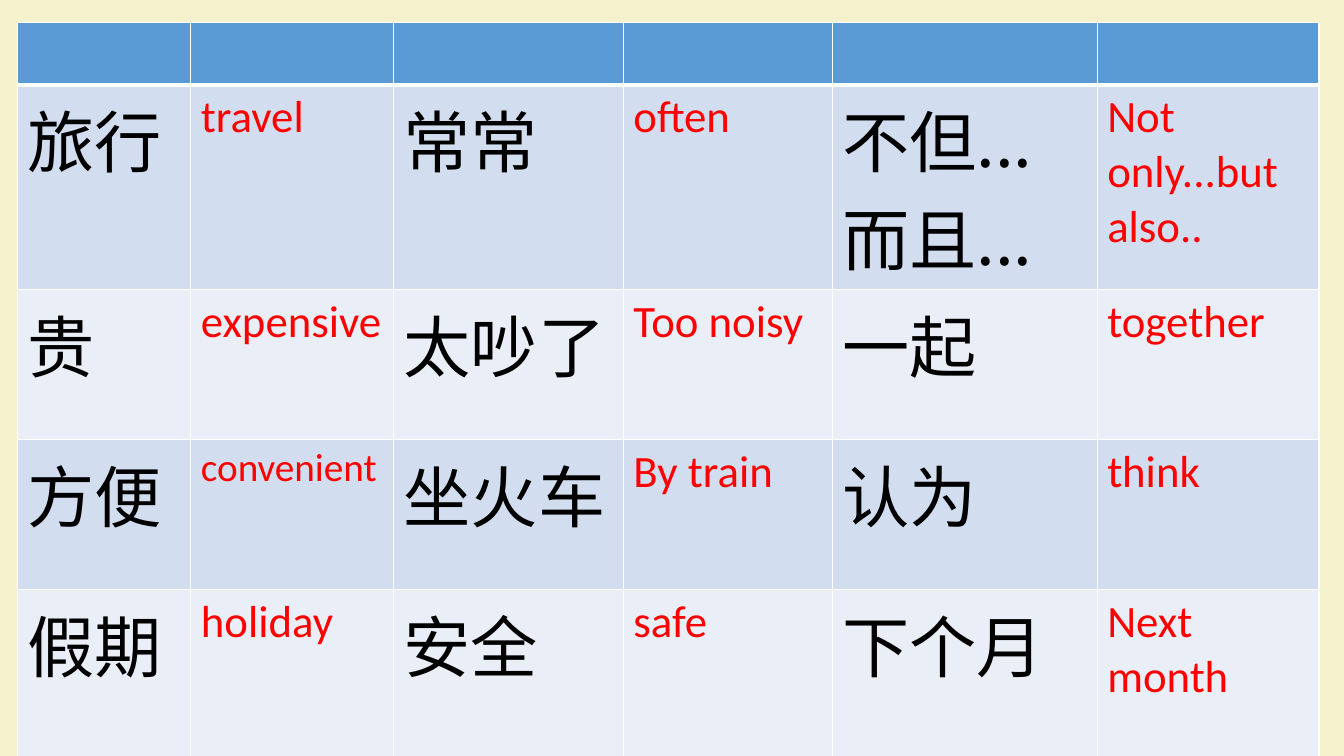
"""Build a Chinese-English vocabulary table slide."""
from dataclasses import dataclass

from lxml import etree
from pptx import Presentation
from pptx import util as u
from pptx.dml import color
from pptx.oxml import ns


@dataclass(frozen=True)
class Theme:
    """Colours, fonts and type sizes of the slide."""
    page: str = "F5F2CD"
    header: str = "5B9BD5"
    bands: tuple = ("D2DEEF", "EAEFF7")
    border: str = "FFFFFF"
    hanzi_color: str = "000000"
    english_color: str = "FF0000"
    hanzi_font: str = "Noto Sans CJK SC"
    english_font: str = "Calibri"
    hanzi_size: int = 48
    english_size: int = 32
    long_size: int = 28


THEME = Theme()
COLUMN_WIDTHS = (4.37, 5.11, 5.79, 5.26, 6.68, 5.59)
ROW_HEIGHTS = (1.57, 4.27, 3.78, 3.78, 4.27)
VOCABULARY = (
    (("旅行", "travel"), ("常常", "often"), ("不但...而且...", "Not only...but also..")),
    (("贵", "expensive"), ("太吵了", "Too noisy"), ("一起", "together")),
    (("方便", "convenient"), ("坐火车", "By train"), ("认为", "think")),
    (("假期", "holiday"), ("安全", "safe"), ("下个月", "Next month")),
)
LONG_WORDS = {"convenient"}


def rgb(value):
    """Return a colour from its hex digits."""
    return color.RGBColor.from_string(value)


def paint(target, value):
    """Give a cell or background a solid fill."""
    target.fill.solid()
    target.fill.fore_color.rgb = rgb(value)


def add_borders(cell, widths):
    """Draw the cell's sides with the given widths in points."""
    properties = cell._tc.get_or_add_tcPr()
    for side, width in widths.items():
        line = etree.SubElement(properties, ns.qn(f"a:ln{side}"), w=str(u.Pt(width)))
        fill = etree.SubElement(line, ns.qn("a:solidFill"))
        etree.SubElement(fill, ns.qn("a:srgbClr"), val=THEME.border)


def style_cell(cell, row):
    """Apply the fill and borders that belong to the row."""
    add_borders(cell, {"L": 1, "R": 1, "T": 3 if row == 1 else 1, "B": 3 if row == 0 else 1})
    paint(cell, THEME.bands[(row - 1) % 2] if row else THEME.header)


def write_word(cell, word, name, size, ink):
    """Write one word into a cell."""
    span = cell.text_frame.paragraphs[0].add_run()
    span.text = word
    for attribute, value in {"name": name, "size": u.Pt(size)}.items():
        setattr(span.font, attribute, value)
    span.font.color.rgb = rgb(ink)
    etree.SubElement(span._r.get_or_add_rPr(), ns.qn("a:ea"), typeface=name)


def write_pair(table, row, column, hanzi, english):
    """Write a Chinese word and its translation side by side."""
    size = THEME.long_size if english in LONG_WORDS else THEME.english_size
    write_word(table.cell(row, column), hanzi, THEME.hanzi_font, THEME.hanzi_size, THEME.hanzi_color)
    write_word(table.cell(row, column + 1), english, THEME.english_font, size, THEME.english_color)


def add_vocabulary(page):
    """Add the vocabulary table to the page."""
    frame = page.shapes.add_table(
        len(ROW_HEIGHTS), len(COLUMN_WIDTHS), u.Cm(0.44), u.Cm(0.57),
        u.Cm(sum(COLUMN_WIDTHS)), u.Cm(sum(ROW_HEIGHTS)))
    table = frame.table
    for column, width in zip(table.columns, COLUMN_WIDTHS):
        column.width = u.Cm(width)
    for index, (row, height) in enumerate(zip(table.rows, ROW_HEIGHTS)):
        row.height = u.Cm(height)
        for cell in row.cells:
            style_cell(cell, index)
    for row, pairs in enumerate(VOCABULARY, start=1):
        for index, pair in enumerate(pairs):
            write_pair(table, row, 2 * index, *pair)


def main():
    """Create and save the deck."""
    deck = Presentation()
    deck.slide_width, deck.slide_height = u.Cm(33.87), u.Cm(19.05)
    page = deck.slides.add_slide(deck.slide_layouts[6])
    paint(page.background, THEME.page)
    add_vocabulary(page)
    deck.save("out.pptx")


if __name__ == "__main__":
    main()
